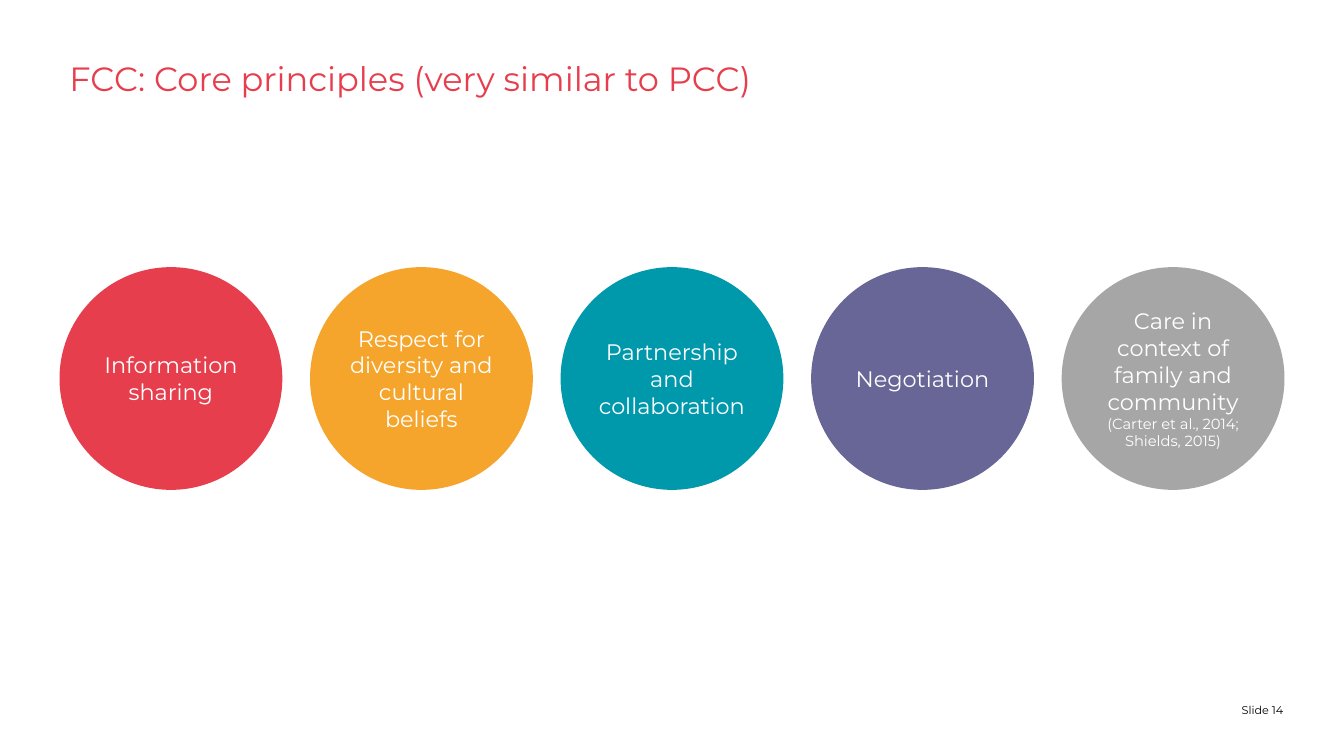
from dataclasses import dataclass

from pptx import Presentation
from pptx.dml.color import RGBColor
from pptx.enum import shapes, text
from pptx.util import Inches, Pt


@dataclass(frozen=True)
class Theme:
    font: str = "Montserrat"
    red: str = "E63E4D"
    orange: str = "F5A52B"
    teal: str = "0099AC"
    purple: str = "676696"
    grey: str = "A6A6A6"
    white: str = "FFFFFF"
    black: str = "000000"
    title_size: float = 24
    body_size: float = 16
    citation_size: float = 10.5
    footer_size: float = 8


THEME = Theme()

PRINCIPLES = [
    (THEME.red, "Information sharing", ""),
    (THEME.orange, "Respect for diversity and cultural beliefs", ""),
    (THEME.teal, "Partnership and collaboration", ""),
    (THEME.purple, "Negotiation", ""),
    (THEME.grey, "Care in context of family and community ",
     "(Carter et al., 2014; Shields, 2015)"),
]

LEFT, TOP, DIAMETER, PITCH = 0.59, 2.65, 2.21, 2.485


def set_frame(tf, anchor, side=0.0, top=0.0):
    """Wrap the text and set its anchor and symmetric insets in inches."""
    frame_format = {
        "word_wrap": True,
        "vertical_anchor": anchor,
        "margin_left": Inches(side),
        "margin_right": Inches(side),
        "margin_top": Inches(top),
        "margin_bottom": Inches(top),
    }
    for name, value in frame_format.items():
        setattr(tf, name, value)


def add_run(p, words, size, color):
    r = p.add_run()
    r.text = words
    for name, value in {"name": THEME.font, "size": Pt(size)}.items():
        setattr(r.font, name, value)
    r.font.color.rgb = RGBColor.from_string(color)


def add_text(s, box, words, size, color, align, anchor, **insets):
    """Add a one-paragraph text box and return the paragraph."""
    tf = s.shapes.add_textbox(*map(Inches, box)).text_frame
    set_frame(tf, anchor, **insets)
    p = tf.paragraphs[0]
    p.alignment = align
    add_run(p, words, size, color)
    return p


def add_principle(s, left, color, words, citation):
    sp = s.shapes.add_shape(shapes.MSO_SHAPE.OVAL, Inches(left), Inches(TOP),
                            Inches(DIAMETER), Inches(DIAMETER))
    sp.shadow.inherit = False
    sp.fill.solid()
    sp.fill.fore_color.rgb = RGBColor.from_string(color)
    sp.line.fill.background()
    set_frame(sp.text_frame, text.MSO_ANCHOR.MIDDLE, side=0.04)
    p = sp.text_frame.paragraphs[0]
    p.alignment = text.PP_ALIGN.CENTER
    add_run(p, words, THEME.body_size, THEME.white)
    if citation:
        add_run(p, citation, THEME.citation_size, THEME.white)


def main():
    prs = Presentation()
    prs.slide_width, prs.slide_height = Inches(13.33), Inches(7.5)
    s = prs.slides.add_slide(prs.slide_layouts[6])

    add_text(s, (11.9, 6.87, 0.83, 0.24), "Slide 14", THEME.footer_size,
             THEME.black, text.PP_ALIGN.RIGHT, text.MSO_ANCHOR.BOTTOM)
    title = add_text(s, (LEFT, 0.59, 12.15, 0.88),
                     "FCC: Core principles (very similar to PCC)",
                     THEME.title_size, THEME.red, text.PP_ALIGN.LEFT,
                     text.MSO_ANCHOR.TOP, side=0.1, top=0.05)
    title.line_spacing = 0.83

    for i, principle in enumerate(PRINCIPLES):
        add_principle(s, LEFT + i * PITCH, *principle)

    prs.save("out.pptx")


if __name__ == "__main__":
    main()
